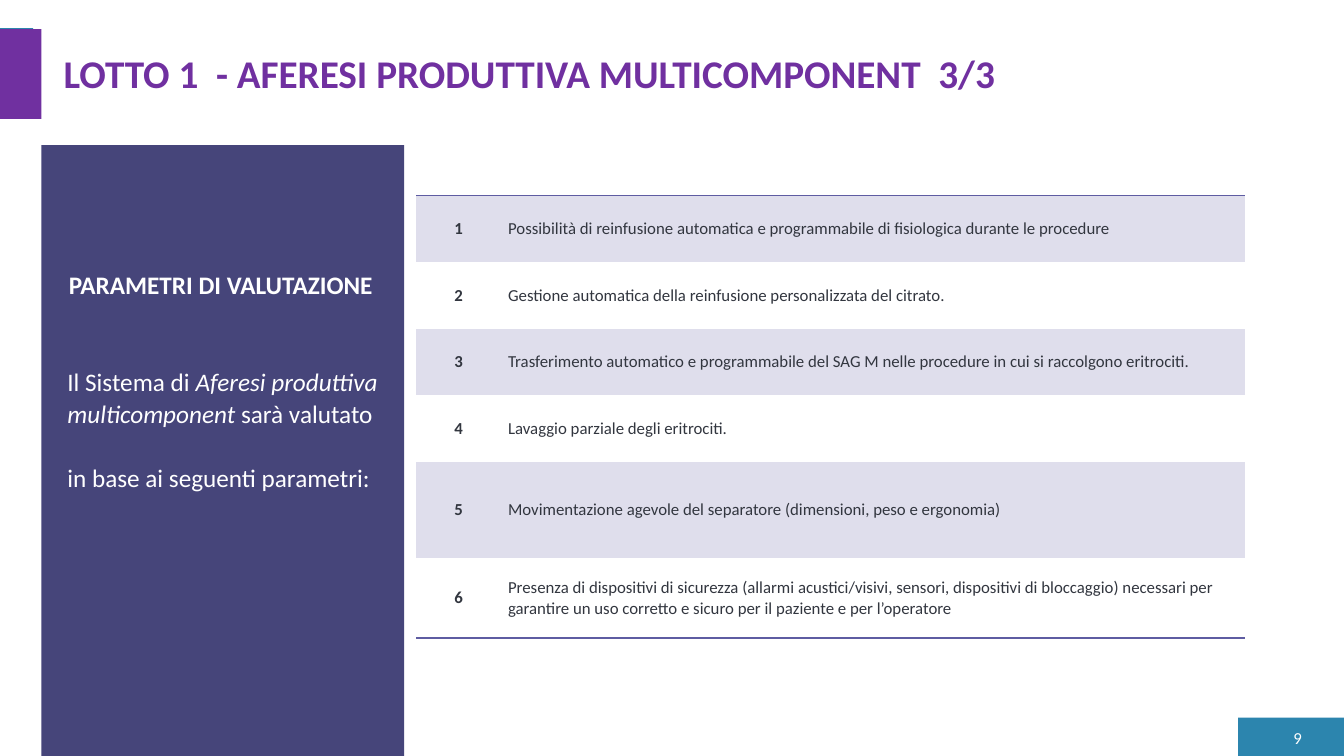
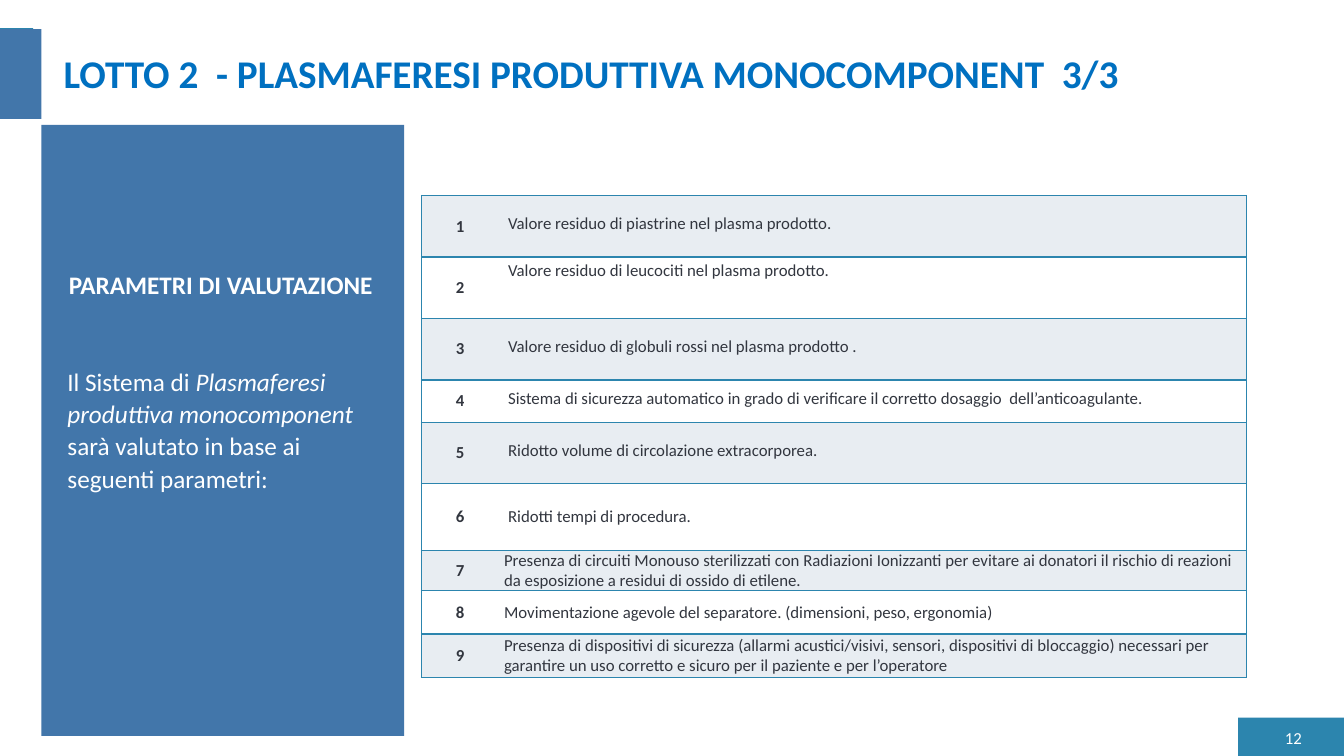
from lxml import etree
from pptx import Presentation
from pptx.dml.color import RGBColor
from pptx.enum import shapes, text
from pptx.oxml.ns import qn
from pptx.util import Inches, Pt

FONT = "Calibri"
WHITE = RGBColor(0xFF, 0xFF, 0xFF)
INK = RGBColor(0x32, 0x36, 0x3F)
TEAL = RGBColor(0x2C, 0x85, 0xAE)
PURPLE = RGBColor(0x70, 0x30, 0xA0)
BLUE = RGBColor(0x00, 0x70, 0xC0)
INDIGO = RGBColor(0x46, 0x45, 0x7A)
STEEL = RGBColor(0x42, 0x76, 0xAA)
VIOLET = RGBColor(0x5E, 0x5C, 0xA2)
LILAC = RGBColor(0xDF, 0xDE, 0xEC)
MIST = RGBColor(0xE8, 0xED, 0xF2)
NO_TABLE_STYLE = "{2D5ABB26-0587-4C30-8999-92F81FD0307C}"

SAFETY = ("Presenza di dispositivi di sicurezza (allarmi acustici/visivi, sensori, "
          "dispositivi di bloccaggio) necessari per garantire un uso corretto e sicuro "
          "per il paziente e per l’operatore")

# Intro: paragraphs made of (text, italic) runs. Rows: (height, criterion).
LOTS = [
    dict(
        title="LOTTO 1  - AFERESI PRODUTTIVA MULTICOMPONENT  3/3",
        number="9", title_color=PURPLE, tab_color=PURPLE,
        panel_color=INDIGO, panel_top=1.44,
        intro=[[("Il Sistema di ", False), ("Aferesi produttiva multicomponent ", True),
                ("sarà valutato", False)],
               [("in base ai seguenti parametri:", False)]],
        left=4.13, columns=(0.84, 7.38), inset=0.07,
        band=LILAC, line=VIOLET, grid=False, tight_rows=(), top_rows=(),
        rows=[
            (0.66, "Possibilità di reinfusione automatica e programmabile di fisiologica "
                   "durante le procedure"),
            (0.66, "Gestione automatica della reinfusione personalizzata del citrato."),
            (0.66, "Trasferimento automatico e programmabile del SAG M nelle procedure "
                   "in cui si raccolgono eritrociti."),
            (0.66, "Lavaggio parziale degli eritrociti."),
            (0.96, "Movimentazione agevole del separatore (dimensioni, peso e ergonomia)"),
            (0.79, SAFETY),
        ]),
    dict(
        title="LOTTO 2  - PLASMAFERESI PRODUTTIVA MONOCOMPONENT  3/3",
        number="12", title_color=BLUE, tab_color=STEEL,
        panel_color=STEEL, panel_top=1.24,
        intro=[[("Il Sistema di ", False), ("Plasmaferesi produttiva monocomponent ", True),
                ("sarà valutato in base ai seguenti parametri:", False)]],
        left=4.18, columns=(0.77, 7.41), inset=0.05,
        band=MIST, line=TEAL, grid=True, tight_rows=range(5), top_rows=(1,),
        rows=[
            (0.61, "Valore residuo di piastrine nel plasma prodotto."),
            (0.61, "Valore residuo di leucociti nel plasma prodotto."),
            (0.61, "Valore residuo di globuli rossi nel plasma prodotto ."),
            (0.42, "Sistema di sicurezza automatico in grado di verificare il corretto "
                   "dosaggio  dell’anticoagulante."),
            (0.61, "Ridotto volume di circolazione extracorporea."),
            (0.66, "Ridotti tempi di procedura."),
            (0.39, "Presenza di circuiti Monouso sterilizzati con Radiazioni Ionizzanti "
                   "per evitare ai donatori il rischio di reazioni da esposizione a "
                   "residui di ossido di etilene."),
            (0.43, "Movimentazione agevole del separatore. (dimensioni, peso, ergonomia)"),
            (0.43, SAFETY),
        ]),
]


def style(paragraph, size, color, bold=False, align=text.PP_ALIGN.LEFT):
    font = paragraph.font
    font.name, font.size, font.bold = FONT, Pt(size), bold
    font.color.rgb = color
    paragraph.alignment = align


def set_borders(cell, sides, color):
    """Draw 1 pt lines on the given sides, listed in the order L, R, T, B."""
    properties = cell._tc.get_or_add_tcPr()
    for position, side in enumerate(sides):
        line = etree.Element(qn(f"a:ln{side}"), w=str(Pt(1)))
        fill = etree.SubElement(line, qn("a:solidFill"))
        etree.SubElement(fill, qn("a:srgbClr"), val=str(color))
        properties.insert(position, line)


prs = Presentation()
prs.slide_width, prs.slide_height = Inches(13.33), Inches(7.5)

for lot in LOTS:
    slide = prs.slides.add_slide(prs.slide_layouts[5])

    # Coloured bands and side panel
    for box, color in [
        ((12.28, 7.12, 1.05, 0.38), TEAL),
        ((0, 0.28, 0.33, 0.83), TEAL),
        ((0, 0.29, 0.41, 0.89), lot["tab_color"]),
        ((0.41, lot["panel_top"], 3.6, 6.06), lot["panel_color"]),
    ]:
        band = slide.shapes.add_shape(shapes.MSO_SHAPE.RECTANGLE, *map(Inches, box))
        band.shadow.inherit = False
        band.fill.solid()
        band.fill.fore_color.rgb = color
        band.line.fill.background()

    title = slide.shapes.title
    title.left, title.top, title.width, title.height = map(Inches, (0.53, 0.44, 12.31, 0.57))
    title.text_frame.auto_size = text.MSO_AUTO_SIZE.NONE
    title.text_frame.vertical_anchor = text.MSO_ANCHOR.TOP
    title.text_frame.text = lot["title"]
    style(title.text_frame.paragraphs[0], 28, lot["title_color"], bold=True)

    # Side panel text
    heading = slide.shapes.add_textbox(*map(Inches, (0.57, 2.62, 3.24, 0.42))).text_frame
    heading.word_wrap = False
    heading.text = "PARAMETRI DI VALUTAZIONE"
    style(heading.paragraphs[0], 18, WHITE, bold=True, align=text.PP_ALIGN.CENTER)

    intro = slide.shapes.add_textbox(*map(Inches, (0.57, 3.56, 3.28, 1.81))).text_frame
    intro.word_wrap = True
    for index, runs in enumerate(lot["intro"]):
        paragraph = intro.add_paragraph() if index else intro.paragraphs[0]
        style(paragraph, 18, WHITE)
        paragraph.line_spacing = 1.07
        paragraph.space_after = Pt(23)
        for words, italic in runs:
            run = paragraph.add_run()
            run.text = words
            run.font.italic = italic

    # Numbered criteria
    rows = lot["rows"]
    criteria = slide.shapes.add_table(
        len(rows), 2, Inches(lot["left"]), Inches(1.94),
        Inches(sum(lot["columns"])), Inches(sum(height for height, _ in rows))).table
    criteria.first_row = criteria.horz_banding = False
    criteria._tbl.tblPr.find(qn("a:tableStyleId")).text = NO_TABLE_STYLE
    for column, width in zip(criteria.columns, lot["columns"]):
        column.width = Inches(width)

    for r, (height, criterion) in enumerate(rows):
        criteria.rows[r].height = Inches(height)
        for c, words in enumerate((str(r + 1), criterion)):
            cell = criteria.cell(r, c)
            cell.margin_left = cell.margin_right = Inches(lot["inset"])
            cell.margin_top = cell.margin_bottom = 0
            cell.vertical_anchor = text.MSO_ANCHOR.MIDDLE
            cell.fill.solid()
            cell.fill.fore_color.rgb = WHITE if r % 2 else lot["band"]
            cell.text = words
            paragraph = cell.text_frame.paragraphs[0]
            style(paragraph, 12, INK, bold=c == 0,
                  align=text.PP_ALIGN.LEFT if c else text.PP_ALIGN.CENTER)
            if c and lot["grid"] and r < 6:
                cell.margin_left = Inches(lot["inset"] + 0.04)
            if c and r in lot["tight_rows"]:
                paragraph.line_spacing = Pt(11.2)
            if c and r in lot["top_rows"]:
                cell.vertical_anchor = text.MSO_ANCHOR.TOP
                cell.margin_top = Inches(0.08)
            if lot["grid"]:
                sides = ["R" if c else "L", "T", "B"]
            else:
                sides = ["T"] * (r == 0) + ["B"] * (r == len(rows) - 1)
            set_borders(cell, sides, lot["line"])

    number = slide.shapes.add_textbox(*map(Inches, (12.5, 7.2, 0.51, 0.23))).text_frame
    number.margin_top = number.margin_bottom = 0
    number.vertical_anchor = text.MSO_ANCHOR.MIDDLE
    number.word_wrap = True
    number.text = lot["number"]
    style(number.paragraphs[0], 12, WHITE, align=text.PP_ALIGN.RIGHT)

prs.save("out.pptx")
